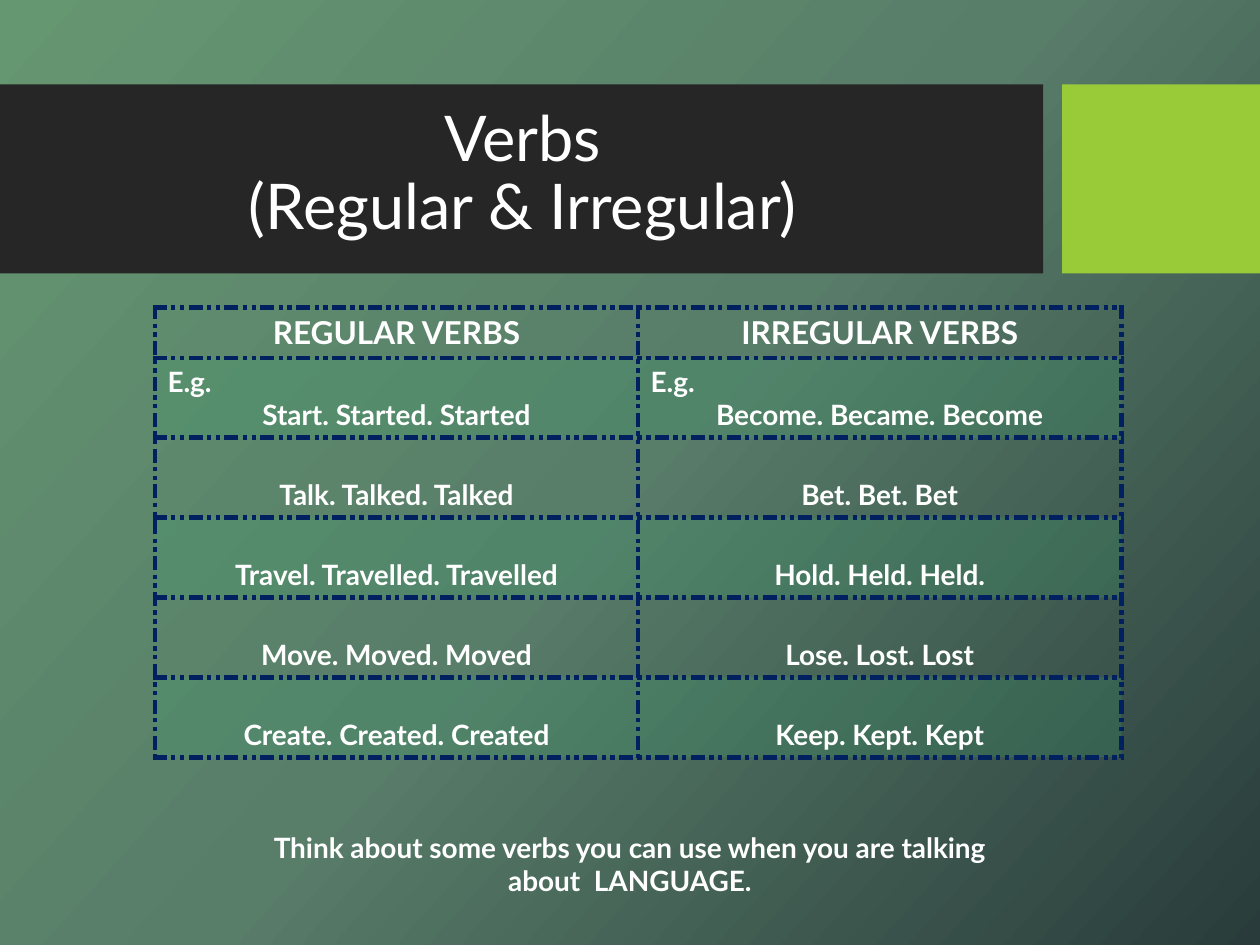
from copy import deepcopy

from lxml import etree
from pptx import Presentation
from pptx.dml.color import RGBColor
from pptx.enum.shapes import MSO_SHAPE
from pptx.enum.text import MSO_ANCHOR, MSO_AUTO_SIZE, PP_ALIGN
from pptx.oxml.ns import qn
from pptx.util import Inches, Pt

RECTANGLE = MSO_SHAPE.RECTANGLE
MIDDLE, BOTTOM = MSO_ANCHOR.MIDDLE, MSO_ANCHOR.BOTTOM
LEFT, CENTER = PP_ALIGN.LEFT, PP_ALIGN.CENTER
NO_AUTOFIT = MSO_AUTO_SIZE.NONE

WHITE = RGBColor(0xFF, 0xFF, 0xFF)
CHARCOAL = RGBColor(0x26, 0x26, 0x26)
LIME = RGBColor(0x99, 0xCB, 0x38)
NAVY = RGBColor(0x00, 0x20, 0x60)
BAND_GREEN = RGBColor(0x37, 0xA7, 0x6F)
BACKDROP = [(0, RGBColor(0x65, 0x97, 0x71)),
            (0.5, RGBColor(0x58, 0x7D, 0x69)),
            (1, RGBColor(0x29, 0x3C, 0x3B))]

COLUMNS, ROWS = 100, 75  # layout grid over the whole slide

VERBS = [
    ("REGULAR VERBS", "IRREGULAR VERBS"),
    ("E.g.\nStart. Started. Started", "E.g.\nBecome. Became. Become"),
    ("Talk. Talked. Talked", "Bet. Bet. Bet"),
    ("Travel. Travelled. Travelled", "Hold. Held. Held."),
    ("Move. Moved. Moved", "Lose. Lost. Lost"),
    ("Create. Created. Created", "Keep. Kept. Kept"),
]


class VerbSlide:
    """Holds the text style and the slide; lengths are grid columns and rows."""

    font = "Lato"
    color = WHITE

    def __init__(self, deck):
        self.column = deck.slide_width / COLUMNS
        self.row = deck.slide_height / ROWS
        self.slide = deck.slides.add_slide(deck.slide_layouts[5])
        self.shapes = self.slide.shapes

    def box(self, left, top, width, height):
        return (round(left * self.column), round(top * self.row),
                round(width * self.column), round(height * self.row))

    def style(self, frame, size, bold=False):
        for paragraph in frame.paragraphs:
            paragraph.alignment = CENTER
            for run in paragraph.runs:
                run.font.name = self.font
                run.font.size = Pt(size)
                run.font.bold = bold
                run.font.color.rgb = self.color

    def backdrop(self, stops, angle):
        fill = self.slide.background.fill
        fill.gradient()
        fill.gradient_angle = 360 - angle
        stop_list = self.slide.background.element.find(".//" + qn("a:gsLst"))
        stop_list.append(deepcopy(stop_list[-1]))
        for stop, (position, color) in zip(fill.gradient_stops, stops):
            stop.position = position
            stop.color.rgb = color

    def panel(self, place, color):
        panel = self.shapes.add_shape(RECTANGLE, *self.box(*place))
        panel.shadow.inherit = False
        panel.fill.solid()
        panel.fill.fore_color.rgb = color
        panel.line.fill.background()

    def title(self, place, text, size):
        title = self.shapes.title
        title.left, title.top, title.width, title.height = self.box(*place)
        frame = title.text_frame
        frame.text = text
        frame.word_wrap = True
        frame.auto_size = NO_AUTOFIT
        frame.vertical_anchor = MIDDLE
        self.style(frame, size)
        frame.paragraphs[0].line_spacing = 0.9
        # Bring the title in front of its panel
        title.element.getparent().append(title.element)

    def caption(self, place, text, size):
        frame = self.shapes.add_textbox(*self.box(*place)).text_frame
        frame.word_wrap = True
        frame.text = text
        self.style(frame, size, bold=True)

    def border(self, cell, color, width):
        properties = cell._tc.get_or_add_tcPr()
        for index, side in enumerate(("lnL", "lnR", "lnT", "lnB")):
            line = etree.Element(qn("a:" + side), w=str(Pt(width)))
            fill = etree.SubElement(line, qn("a:solidFill"))
            etree.SubElement(fill, qn("a:srgbClr"), val=str(color))
            etree.SubElement(line, qn("a:prstDash"), val="sysDashDotDot")
            properties.insert(index, line)

    def tint(self, cell, color, opacity):
        cell.fill.solid()
        cell.fill.fore_color.rgb = color
        shade = cell._tc.tcPr.find(".//" + qn("a:srgbClr"))
        etree.SubElement(shade, qn("a:alpha"), val=str(opacity * 1000))

    def table(self, place, entries, header_height, header_size, size):
        left, top, width, height = place
        table = self.shapes.add_table(
            len(entries), len(entries[0]), *self.box(*place)).table
        body_height = (height - header_height) / (len(entries) - 1)
        for index, texts in enumerate(entries):
            header = index == 0
            table.rows[index].height = round(
                (header_height if header else body_height) * self.row)
            for cell, text in zip(table.rows[index].cells, texts):
                cell.text = text
                cell.vertical_anchor = BOTTOM
                self.style(cell.text_frame, header_size if header else size,
                           bold=True)
                if len(cell.text_frame.paragraphs) > 1:
                    cell.text_frame.paragraphs[0].alignment = LEFT
                if index % 2:
                    self.tint(cell, BAND_GREEN, 20)
                else:
                    cell.fill.background()
                self.border(cell, NAVY, 3)


def main():
    deck = Presentation()
    deck.slide_width, deck.slide_height = Inches(10), Inches(7.5)
    verbs = VerbSlide(deck)
    verbs.backdrop(BACKDROP, 42)

    # Heading band
    verbs.panel((0, 6.7, 82.8, 15), CHARCOAL)
    verbs.panel((84.3, 6.7, 15.7, 15), LIME)
    verbs.title((0, 8, 83, 11.8), "Verbs\v(Regular & Irregular)", 36)

    # Verb examples
    verbs.table((12.3, 24.4, 76.7, 35.7), VERBS, 4, 18, 16)

    # Closing prompt
    verbs.caption((2.5, 65.4, 95, 6.4),
                  "Think about some verbs you can use when you are talking\n"
                  "about  LANGUAGE.", 16)

    deck.save("out.pptx")


if __name__ == "__main__":
    main()
